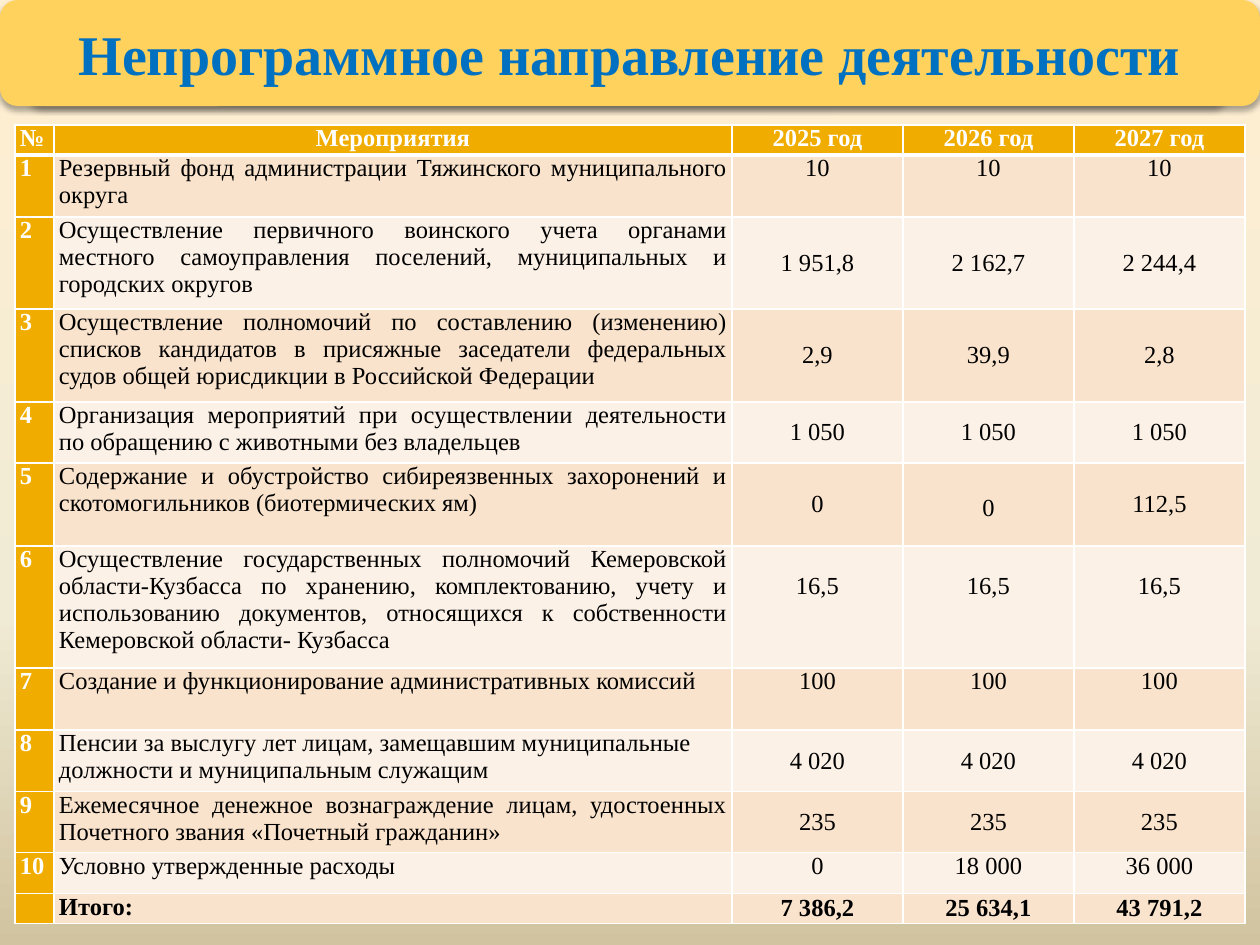
from lxml import etree
from pptx import Presentation
from pptx import util as u
from pptx.dml.color import RGBColor
from pptx.enum import shapes, text
from pptx.oxml.ns import qn

SCALE = 914400 / 126  # EMU in one px
FONT = "Times New Roman"

WHITE = RGBColor(0xFF, 0xFF, 0xFF)
BLACK = RGBColor(0x00, 0x00, 0x00)
BLUE = RGBColor(0x00, 0x70, 0xC0)
BANNER = RGBColor(0xFF, 0xD2, 0x5D)
AMBER = RGBColor(0xF0, 0xAD, 0x00)
BANDS = (RGBColor(0xFC, 0xF1, 0xE7), RGBColor(0xF9, 0xE3, 0xCC))
BACKGROUND = (
    (0, RGBColor(0xFF, 0xEF, 0xD1)),
    (65, RGBColor(0xF0, 0xEB, 0xD5)),
    (100, RGBColor(0xD1, 0xC3, 0x9F)),
)

CENTER, LEFT, JUSTIFY = (text.PP_ALIGN.CENTER, text.PP_ALIGN.LEFT,
                         text.PP_ALIGN.JUSTIFY)
TOP, MIDDLE = text.MSO_ANCHOR.TOP, text.MSO_ANCHOR.MIDDLE

COLUMN_WIDTHS = (39, 678, 171, 171, 171)
HEADER = ("№", "Мероприятия", "2025 год", "2026 год", "2027 год")
HEADER_HEIGHT = 30
# Row height, anchor of the figures, texts
ROWS = (
    (62, TOP, ("1", "Резервный фонд администрации Тяжинского муниципального округа",
               "10", "10", "10")),
    (92, MIDDLE, ("2", "Осуществление первичного воинского учета органами местного "
                  "самоуправления поселений, муниципальных и городских округов",
                  "1 951,8", "2 162,7", "2 244,4")),
    (93, MIDDLE, ("3", "Осуществление полномочий по составлению (изменению) списков "
                  "кандидатов в присяжные заседатели федеральных судов общей "
                  "юрисдикции в Российской Федерации", "2,9", "39,9", "2,8")),
    (61, MIDDLE, ("4", "Организация мероприятий при осуществлении деятельности по "
                  "обращению с животными без владельцев",
                  "1 050", "1 050", "1 050")),
    (83, MIDDLE, ("5", "Содержание и обустройство сибиреязвенных захоронений и "
                  "скотомогильников (биотермических ям)", "0", "0", "112,5")),
    (122, TOP, ("6", "Осуществление государственных полномочий Кемеровской "
                "области-Кузбасса по хранению, комплектованию, учету и "
                "использованию документов, относящихся к собственности "
                "Кемеровской области- Кузбасса", "16,5", "16,5", "16,5")),
    (62, TOP, ("7", "Создание и функционирование административных комиссий",
               "100", "100", "100")),
    (62, MIDDLE, ("8", "Пенсии за выслугу лет лицам, замещавшим муниципальные "
                  "должности и муниципальным служащим",
                  "4 020", "4 020", "4 020")),
    (61, MIDDLE, ("9", "Ежемесячное денежное вознаграждение лицам, удостоенных "
                  "Почетного звания «Почетный гражданин»", "235", "235", "235")),
    (41, TOP, ("10", "Условно утвержденные расходы", "0", "18 000", "36 000")),
    (30, MIDDLE, ("", "Итого:", "7 386,2", "25 634,1", "43 791,2")),
)
TOTAL_ROW = len(ROWS)
LEFT_ALIGNED = {(8, 1)}
# Cells whose figure sits lower, with their top inset
LOWERED = {(5, 3): 8, (6, 2): 27, (6, 3): 27, (6, 4): 27}


def px(n):
    return u.Emu(round(n * SCALE))


def add_color(parent, color, alpha=None):
    clr = etree.SubElement(parent, qn("a:srgbClr"), val=str(color))
    if alpha is not None:
        etree.SubElement(clr, qn("a:alpha"), val=str(alpha * 1000))


def set_background(s):
    fill = s.background.fill
    fill.gradient()
    fill.gradient_angle = 270
    stops = s.element.find(".//" + qn("a:gsLst"))
    for stop in list(stops):
        stops.remove(stop)
    for position, color in BACKGROUND:
        add_color(etree.SubElement(stops, qn("a:gs"), pos=str(position * 1000)), color)


def add_text(p, value, size, color, bold, align):
    p.alignment = align
    if not value:
        p._p.get_or_add_endParaRPr().set("sz", str(size * 100))
        return
    r = p.add_run()
    r.text = value
    r.font.name, r.font.size, r.font.bold = FONT, u.Pt(size), bold
    r.font.color.rgb = color


def add_banner(s, left, width):
    sp = s.shapes.add_shape(shapes.MSO_SHAPE.ROUNDED_RECTANGLE,
                            px(left), 0, px(width), px(106))
    sp.fill.solid()
    sp.fill.fore_color.rgb = BANNER
    sp.line.fill.background()
    sp.shadow.inherit = False
    effects = sp._element.spPr.find(qn("a:effectLst"))
    shadow = etree.SubElement(effects, qn("a:outerShdw"), blurRad=str(u.Pt(3.5)),
                              dist=str(u.Pt(2.2)), dir="5400000", rotWithShape="0")
    add_color(shadow, BLACK, 32)
    return sp


def set_borders(cell, row):
    tcPr = cell._tc.get_or_add_tcPr()
    thick = {0: "B", 1: "T"}.get(row)  # heavy rule under the header
    for side in "LRTB":
        width = u.Pt(3 if side == thick else 1)
        ln = etree.SubElement(tcPr, qn("a:ln" + side), w=str(width))
        add_color(etree.SubElement(ln, qn("a:solidFill")), WHITE)


def fill_cell(cell, row, col, value, anchor):
    amber = row == 0 or col == 0
    figure = row > 0 and col > 1
    set_borders(cell, row)
    cell.fill.solid()
    cell.fill.fore_color.rgb = AMBER if amber else BANDS[row % 2]
    cell.vertical_anchor = anchor if figure else TOP
    cell.margin_left = cell.margin_right = px(9 if figure and anchor == MIDDLE else 5)
    cell.margin_top, cell.margin_bottom = px(LOWERED.get((row, col), 0)), 0
    if (row, col) in LEFT_ALIGNED:
        align = LEFT
    else:
        align = CENTER if col > 1 or (row, col) == (0, 1) else JUSTIFY
    add_text(cell.text_frame.paragraphs[0], value, 14, WHITE if amber else BLACK,
             amber or row == TOTAL_ROW, align)


def add_budget_table(s):
    rows = ((HEADER_HEIGHT, TOP, HEADER),) + ROWS
    height = sum(row[0] for row in rows)
    table = s.shapes.add_table(len(rows), len(HEADER), px(15), px(125),
                               px(sum(COLUMN_WIDTHS)), px(height)).table
    table.first_row = table.horz_banding = False
    for column, width in zip(table.columns, COLUMN_WIDTHS):
        column.width = px(width)
    for i, (row_height, anchor, values) in enumerate(rows):
        table.rows[i].height = px(row_height)
        for j, value in enumerate(values):
            fill_cell(table.cell(i, j), i, j, value, anchor)


def main():
    prs = Presentation()
    prs.slide_width, prs.slide_height = px(1260), px(945)
    s = prs.slides.add_slide(prs.slide_layouts[6])
    set_background(s)

    # Title: a narrower banner deepens the shadow under the full-width one
    add_banner(s, 26, 1201)
    tf = add_banner(s, 0, 1260).text_frame
    tf.word_wrap = True
    tf.vertical_anchor = MIDDLE
    add_text(tf.paragraphs[0], "Непрограммное направление деятельности",
             32, BLUE, True, CENTER)

    # Budget figures by year
    add_budget_table(s)
    prs.save("out.pptx")


if __name__ == "__main__":
    main()
